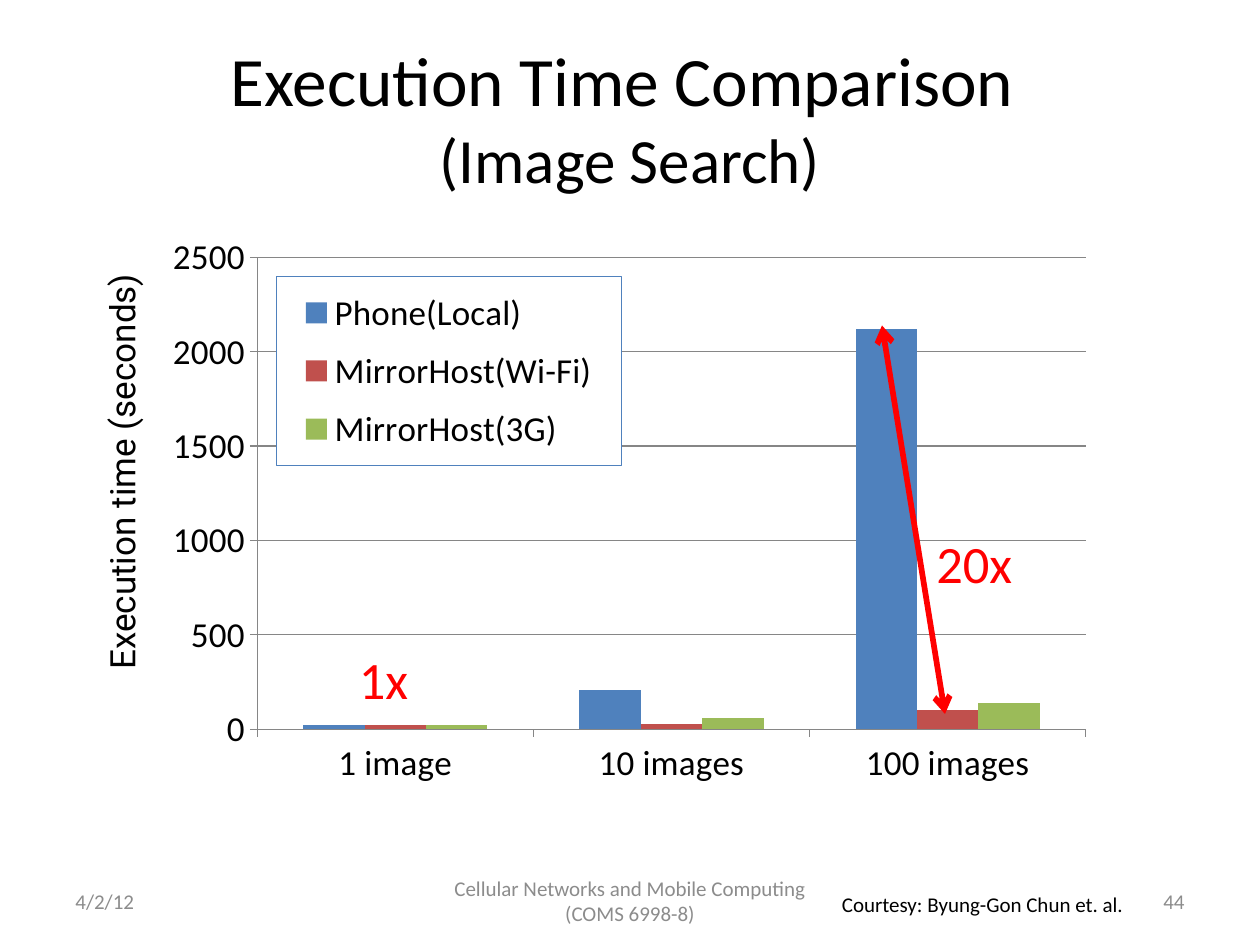
from dataclasses import dataclass

from lxml import etree
from pptx import Presentation
from pptx.chart.data import CategoryChartData
from pptx.dml.color import RGBColor
from pptx.enum.chart import XL_CHART_TYPE, XL_LEGEND_POSITION, XL_TICK_MARK
from pptx.enum.shapes import MSO_CONNECTOR
from pptx.enum.text import MSO_ANCHOR, MSO_AUTO_SIZE, PP_ALIGN
from pptx.oxml import parse_xml
from pptx.oxml.ns import nsdecls, qn
from pptx.util import Pt

LEFT, CENTER, RIGHT = PP_ALIGN.LEFT, PP_ALIGN.CENTER, PP_ALIGN.RIGHT
TOP, MIDDLE = MSO_ANCHOR.TOP, MSO_ANCHOR.MIDDLE
NO_FIT = MSO_AUTO_SIZE.NONE
COLUMN = XL_CHART_TYPE.COLUMN_CLUSTERED
SIDE = XL_LEGEND_POSITION.RIGHT
OUT, NONE = XL_TICK_MARK.OUTSIDE, XL_TICK_MARK.NONE
STRAIGHT = MSO_CONNECTOR.STRAIGHT

BLACK = RGBColor(0x00, 0x00, 0x00)
WHITE = RGBColor(0xFF, 0xFF, 0xFF)
GRAY = RGBColor(0x8C, 0x8C, 0x8C)
RULE = RGBColor(0x86, 0x86, 0x86)
RED = RGBColor(0xFF, 0x00, 0x00)
BLUE = RGBColor(0x4F, 0x81, 0xBD)
BRICK = RGBColor(0xC0, 0x50, 0x4D)
GREEN = RGBColor(0x9B, 0xBB, 0x59)
FONT = "Calibri"
WIDE, HIGH = 600, 348


@dataclass
class Label:
    text: str
    left: float
    top: float
    width: float
    height: float
    size: float
    color: RGBColor
    align: PP_ALIGN = LEFT
    anchor: MSO_ANCHOR = TOP
    wrap: bool = False
    font: str = FONT
    turn: float = 0


@dataclass
class Series:
    name: str
    values: tuple
    color: RGBColor


LABELS = [
    Label("Execution time (seconds)", -51, 253.5, 241, 31.5, 20, BLACK,
          font="Roboto", turn=270),
    Label("20x", 528, 300, 58, 44, 30, RED),
    Label("1x", 198, 366, 43, 44, 30, RED),
    Label("4/2/12", 36, 500.5, 168, 28.75, 12, GRAY, LEFT, MIDDLE, True),
    Label("Cellular Networks and Mobile Computing (COMS 6998-8)",
          246, 500.5, 228, 28.75, 12, GRAY, CENTER, MIDDLE, True),
    Label("44", 516, 500.5, 168, 28.75, 12, GRAY, RIGHT, MIDDLE, True),
    Label("Courtesy: Byung-Gon Chun et. al.", 474, 506, 177, 21.8, 12, BLACK),
]
CATS = ("1 image", "10 images", "100 images")
SERIES = [
    Series("Phone(Local)", (20, 210, 2120), BLUE),
    Series("MirrorHost(Wi-Fi)", (20, 30, 100), BRICK),
    Series("MirrorHost(3G)", (20, 60, 140), GREEN),
]


def assign(item, **values) -> None:
    for name, value in values.items():
        setattr(item, name, value)


def style(font, size: float, color: RGBColor, name: str = FONT) -> None:
    assign(font, size=Pt(size), name=name)
    font.color.rgb = color


def stroke(line, color: RGBColor, width: float) -> None:
    line.color.rgb = color
    line.width = Pt(width)


def title(slide) -> None:
    shape = slide.shapes.title
    assign(shape, left=Pt(36), top=Pt(21.6), width=Pt(648), height=Pt(90))
    frame = shape.text_frame
    assign(frame, auto_size=NO_FIT, vertical_anchor=MIDDLE)
    para = frame.paragraphs[0]
    para.alignment = CENTER
    first = para.add_run()
    first.text = "Execution Time Comparison "
    style(first.font, 39.6, BLACK)
    para.add_line_break()
    second = para.add_run()
    second.text = "(Image Search)"
    style(second.font, 36, BLACK)


def write(slide, label: Label) -> None:
    box = slide.shapes.add_textbox(
        Pt(label.left), Pt(label.top), Pt(label.width), Pt(label.height))
    box.rotation = label.turn
    frame = box.text_frame
    assign(frame, word_wrap=label.wrap, vertical_anchor=label.anchor)
    para = frame.paragraphs[0]
    para.alignment = label.align
    run = para.add_run()
    run.text = label.text
    style(run.font, label.size, label.color, label.font)


def layout(x: float, y: float, w: float, h: float, inner: bool = False):
    parts = {"xMode": "edge", "yMode": "edge",
             "x": x / WIDE, "y": y / HIGH, "w": w / WIDE, "h": h / HIGH}
    if inner:
        parts = {"layoutTarget": "inner", **parts}
    body = "".join(f'<c:{key} val="{val}"/>' for key, val in parts.items())
    return parse_xml(f'<c:layout {nsdecls("c")}><c:manualLayout>{body}'
                     '</c:manualLayout></c:layout>')


def place(parent, node, index: int) -> None:
    old = parent.find(qn("c:layout"))
    if old is not None:
        parent.remove(old)
    parent.insert(index, node)


def legend(chart) -> None:
    chart.has_legend = True
    key = chart.legend
    assign(key, position=SIDE, include_in_layout=False)
    style(key.font, 20, BLACK)
    node = key._element
    place(node, layout(92, 32, 197, 108), 1)
    node.find(qn("c:txPr")).addprevious(parse_xml(
        f'<c:spPr {nsdecls("c", "a")}>'
        f'<a:solidFill><a:srgbClr val="{WHITE}"/></a:solidFill>'
        f'<a:ln w="{Pt(0.5)}"><a:solidFill><a:srgbClr val="{BLUE}"/>'
        '</a:solidFill></a:ln></c:spPr>'))


def graph(slide) -> None:
    data = CategoryChartData()
    data.categories = CATS
    for item in SERIES:
        data.add_series(item.name, item.values)
    chart = slide.shapes.add_chart(
        COLUMN, Pt(66), Pt(126), Pt(WIDE), Pt(HIGH), data).chart
    chart.has_title = False
    style(chart.font, 10, BLACK)
    plot = chart.plots[0]
    assign(plot, gap_width=150, overlap=0, vary_by_categories=False)
    for bar, item in zip(plot.series, SERIES):
        bar.format.fill.solid()
        bar.format.fill.fore_color.rgb = item.color
    axis = chart.value_axis
    assign(axis, minimum_scale=0, maximum_scale=2500, major_unit=500,
           has_major_gridlines=True)
    stroke(axis.major_gridlines.format.line, RULE, 0.75)
    for side in (chart.category_axis, axis):
        assign(side, major_tick_mark=OUT, minor_tick_mark=NONE)
        style(side.tick_labels.font, 20, BLACK)
        stroke(side.format.line, RULE, 0.75)
    area = chart._chartSpace.chart.plotArea
    place(area, layout(81, 21, 473.5, 269.75, True), 0)
    legend(chart)


def arrow(slide) -> None:
    line = slide.shapes.add_connector(
        STRAIGHT, Pt(504), Pt(186), Pt(540), Pt(408))
    stroke(line.line, RED, 3.25)
    outline = line.line._get_or_add_ln()
    for end in ("a:headEnd", "a:tailEnd"):
        etree.SubElement(outline, qn(end), type="arrow")
    etree.SubElement(line._element.spPr, qn("a:effectLst"))


def main() -> None:
    deck = Presentation()
    assign(deck, slide_width=Pt(720), slide_height=Pt(540))
    slide = deck.slides.add_slide(deck.slide_layouts[5])
    title(slide)
    graph(slide)
    arrow(slide)
    for label in LABELS:
        write(slide, label)
    deck.save("out.pptx")


if __name__ == "__main__":
    main()
